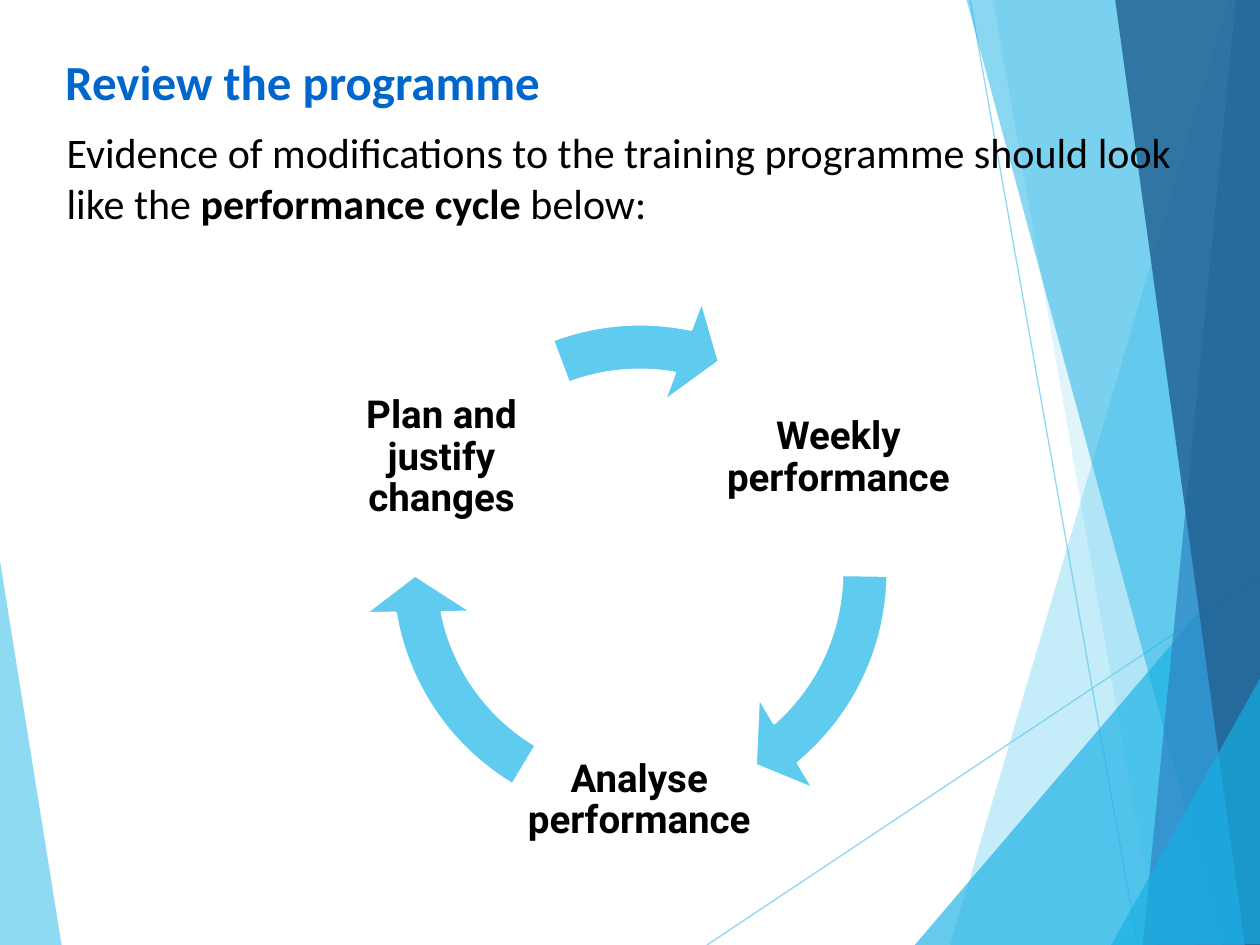
from lxml.etree import SubElement
from pptx import Presentation
from pptx.dml.color import RGBColor as Color
from pptx.enum.shapes import MSO_CONNECTOR as Connector, MSO_SHAPE as Shape
from pptx.enum.text import MSO_ANCHOR as Anchor, MSO_AUTO_SIZE as AutoSize, PP_ALIGN as Align
from pptx.oxml.ns import qn
from pptx.util import Pt

WIDTH, HEIGHT = 720, 540
THEME = {
    "sky": "5FCBEF", "cyan": "17B0E4", "blue": "2E83C3", "navy": "226292",
    "white": "FFFFFF",
    "title": {"name": "Calibri", "size": 28, "color": "0066CC", "bold": True},
    "body": {"name": "Calibri", "size": 24, "color": "000000", "bold": False},
    "strong": {"name": "Calibri", "size": 24, "color": "000000", "bold": True},
    "stage": {"name": "Roboto", "size": 22, "color": "000000", "bold": True},
}

LEFT_FACET = ("sky", 70, [(-0.7, 316), (35.3, 540.5), (-0.7, 540)])
RAYS = [((404, 540), (720.7, 329)), ((554.4, 0), (650.2, 540))]
RIGHT_FACETS = [
    ("sky", 36, [(702, 0), (543, 540), (721.4, 540.5), (720.7, 0.5)]),
    ("sky", 20, [(567.4, -0.7), (661.7, 540), (720.7, 540), (720.7, -0.7)]),
    ("cyan", 66, [(522.7, 540), (720, 309), (720.7, 540)]),
    ("cyan", 50, [(552.2, -0.7), (698.4, 540), (720.7, 539.5), (720.7, -0.7)]),
    ("blue", 70, [(706.3, -0.7), (653, 540), (720.7, 540), (720, -0.7)]),
    ("navy", 82, [(637.2, -0.7), (711.4, 540), (721.4, 540), (720, -0.7)]),
    ("cyan", 66, [(635, 540), (721.4, 385.2), (721.4, 539.5)]),
]

HEADINGS = [
    ((31, 69, 652.3, 65.5), [
        ("Evidence of modifications to the training programme should look like the ", "body"),
        ("performance cycle", "strong"),
        (" below:", "body"),
    ]),
    ((30.2, 26, 545.8, 41), [("Review the programme", "title")]),
]

STAGES = [
    ("Weekly performance", (411.8, 194.4), (29.686, 0.486)),
    ("Analyse performance", (298, 390.2), (101.763, 72.564)),
    ("Plan and justify changes", (185, 194.4), (168.611, 149.638)),
]
STAGE_SIZE = 134.6
CYCLE_BOX = (206.6, 167.8, 318.2, 318.2)
SHAFT, HEAD_ANGLE, HEAD_WIDTH = 0.082, 5.751, 0.096


def theme_color(name):
    return Color.from_string(THEME[name])


def points(values):
    return [Pt(value) for value in values]


def set_alpha(fill_or_line, percent):
    for color in fill_or_line.iter(qn("a:srgbClr")):
        SubElement(color, qn("a:alpha")).set("val", str(percent * 1000))


def add_facet(slide, color, opacity, corners):
    first, *others = [points(corner) for corner in corners]
    builder = slide.shapes.build_freeform(*first, scale=1.0)
    builder.add_line_segments(others, close=True)
    shape = builder.convert_to_shape()
    shape.shadow.inherit = False
    shape.fill.solid()
    shape.fill.fore_color.rgb = theme_color(color)
    shape.line.fill.background()
    set_alpha(shape._element.spPr, opacity)


def add_ray(slide, start, end):
    connector = slide.shapes.add_connector(Connector.STRAIGHT, *points(start + end))
    connector.line.color.rgb = theme_color("sky")
    connector.line.width = Pt(0.75)
    properties = connector._element.spPr
    set_alpha(properties, 70)
    SubElement(properties, qn("a:effectLst"))


def add_text(slide, box, runs, frame_format, paragraph_format):
    frame = slide.shapes.add_textbox(*points(box)).text_frame
    for name, value in frame_format.items():
        setattr(frame, name, value)
    paragraph = frame.paragraphs[0]
    for name, value in paragraph_format.items():
        setattr(paragraph, name, value)
    for text, style in runs:
        run = paragraph.add_run()
        run.text = text
        font_format = dict(THEME[style])
        run.font.color.rgb = Color.from_string(font_format.pop("color"))
        font_format["size"] = Pt(font_format["size"])
        for name, value in font_format.items():
            setattr(run.font, name, value)


def add_cycle_arrow(slide, end_angle, start_angle):
    arrow = slide.shapes.add_shape(Shape.CIRCULAR_ARROW, *points(CYCLE_BOX))
    adjustments = (SHAFT, HEAD_ANGLE, end_angle, start_angle, HEAD_WIDTH)
    for index, value in enumerate(adjustments):
        arrow.adjustments[index] = value
    arrow.shadow.inherit = False
    arrow.fill.solid()
    arrow.fill.fore_color.rgb = theme_color("sky")
    arrow.line.color.rgb = theme_color("white")
    arrow.line.width = Pt(1.5)


def main():
    presentation = Presentation()
    presentation.slide_width, presentation.slide_height = Pt(WIDTH), Pt(HEIGHT)
    slide = presentation.slides.add_slide(presentation.slide_layouts[6])

    add_facet(slide, *LEFT_FACET)
    for start, end in RAYS:
        add_ray(slide, start, end)
    for facet in RIGHT_FACETS:
        add_facet(slide, *facet)

    heading_frame = {"word_wrap": True, "auto_size": AutoSize.SHAPE_TO_FIT_TEXT}
    margins = ("margin_left", "margin_top", "margin_right", "margin_bottom")
    stage_frame = {"word_wrap": True, "vertical_anchor": Anchor.MIDDLE,
                   **dict.fromkeys(margins, Pt(2.2))}
    stage_paragraph = {"alignment": Align.CENTER, "line_spacing": 0.9}

    body, title = HEADINGS
    add_text(slide, *body, heading_frame, {})
    for label, corner, angles in STAGES:
        box = (*corner, STAGE_SIZE, STAGE_SIZE)
        add_text(slide, box, [(label, "stage")], stage_frame, stage_paragraph)
        add_cycle_arrow(slide, *angles)
    add_text(slide, *title, heading_frame, {})

    presentation.save("out.pptx")


if __name__ == "__main__":
    main()
